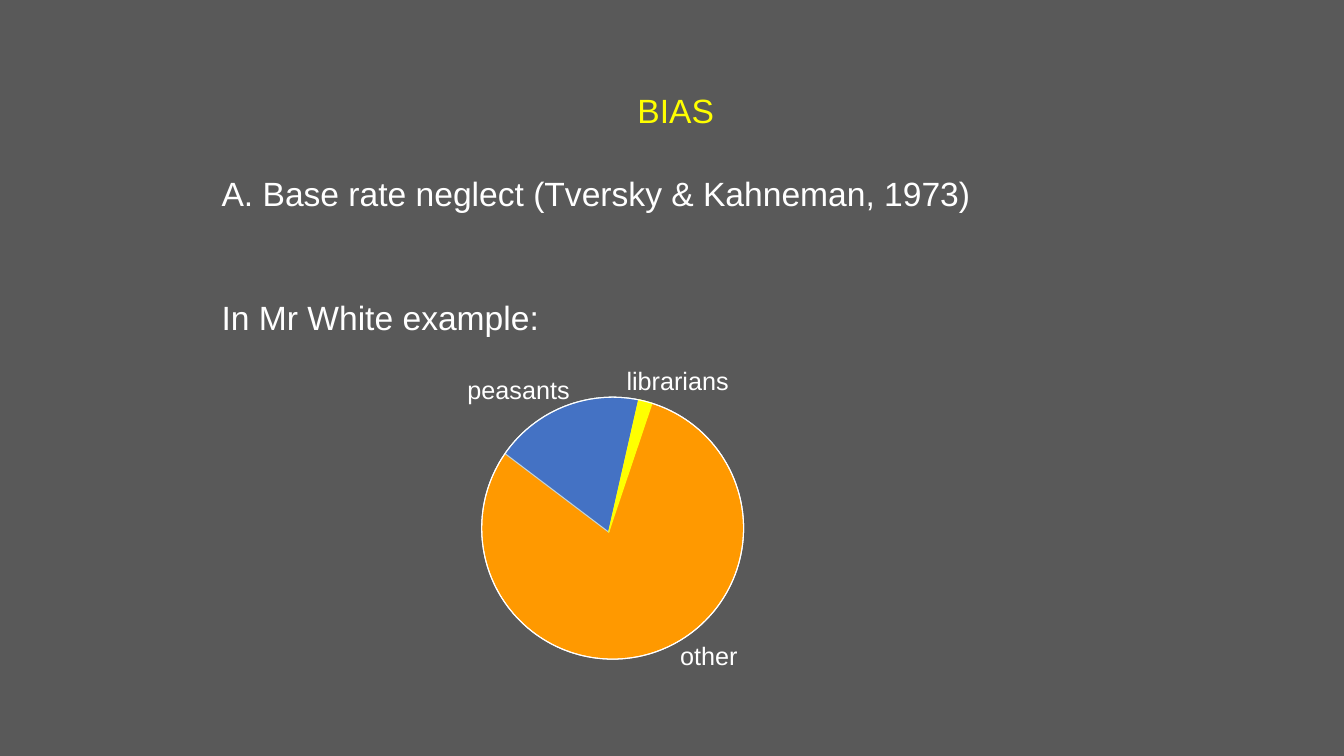
"""Build the base rate neglect slide with its hand-drawn pie."""
from math import cos, radians, sin

from lxml import etree
from pptx import Presentation
from pptx import util as u
from pptx.dml import color
from pptx.enum import shapes, text
from pptx.oxml import ns

WHITE, YELLOW = "FFFFFF", "FFFF00"
TITLE = "BIAS"
LINES = [
    ("A. Base rate neglect (Tversky & Kahneman, 1973)", 0),
    ("In Mr White example:", 59.5),
]
LABELS = [
    ("peasants", 11.53, 9.3, 3.2),
    ("librarians", 15.54, 9.09, 3.81),
    ("other", 16.89, 16.0, 3.2),
]
WEDGES = [
    (214.7, 281.5, "4472C4", "C0D3DC"),
    (281.5, 287.5, YELLOW, YELLOW),
]
HUB = (15.44, 13.31)
TIP = (15.34, 13.41)
RADIUS = 3.3
STEPS = 40


def rgb(code):
    return color.RGBColor.from_string(code)


def place(shape, *box):
    shape.left, shape.top, shape.width, shape.height = map(u.Cm, box)


def setup(frame):
    frame.word_wrap = True
    frame.auto_size = text.MSO_AUTO_SIZE.NONE
    frame.vertical_anchor = text.MSO_ANCHOR.TOP


def write(para, words, size, tint, align):
    para.alignment = align
    run = para.add_run()
    run.text = words
    run.font.name = "Arial"
    run.font.size = u.Pt(size)
    run.font.color.rgb = rgb(tint)


def paint(shape, fill, line):
    shape.shadow.inherit = False
    if fill:
        shape.fill.solid()
        shape.fill.fore_color.rgb = rgb(fill)
    else:
        shape.fill.background()
    shape.line.color.rgb = rgb(line)
    shape.line.width = u.Pt(0.75)


def disc(group, fill):
    box = [HUB[0] - RADIUS, HUB[1] - RADIUS, 2 * RADIUS, 2 * RADIUS]
    oval = group.shapes.add_shape(shapes.MSO_SHAPE.OVAL, *map(u.Cm, box))
    paint(oval, fill, WHITE)


def wedge(group, start, end, fill, line):
    turns = [radians(start + (end - start) * i / STEPS) for i in range(STEPS + 1)]
    arc = [(u.Cm(HUB[0] + RADIUS * cos(t)), u.Cm(HUB[1] + RADIUS * sin(t))) for t in turns]
    pen = group.shapes.build_freeform(*map(u.Cm, TIP))
    pen.add_line_segments(arc, close=True)
    paint(pen.convert_to_shape(), fill, line)


def main():
    deck = Presentation()
    deck.slide_width, deck.slide_height = u.Cm(33.87), u.Cm(19.05)
    slide = deck.slides.add_slide(deck.slide_layouts[1])
    slide.background.fill.solid()
    slide.background.fill.fore_color.rgb = rgb("595959")

    title, body = slide.placeholders
    place(title, 4.93, 2.13, 24.2, 1.6)
    setup(title.text_frame)
    write(title.text_frame.paragraphs[0], TITLE, 24, YELLOW, text.PP_ALIGN.CENTER)

    place(body, 5.33, 4.24, 23.01, 4.35)
    frame = body.text_frame
    setup(frame)
    for i, (words, gap) in enumerate(LINES):
        para = frame.add_paragraph() if i else frame.paragraphs[0]
        write(para, words, 24, WHITE, text.PP_ALIGN.JUSTIFY)
        para.space_before = u.Pt(gap)
        props = para._p.get_or_add_pPr()
        props.set("marL", "0")
        props.set("indent", "0")
        etree.SubElement(props, ns.qn("a:buNone"))

    pie = slide.shapes.add_group_shape()
    disc(pie, "FF9900")
    for part in WEDGES:
        wedge(pie, *part)
    disc(pie, None)

    for words, left, top, width in LABELS:
        label = slide.shapes.add_textbox(*map(u.Cm, (left, top, width, 1.02)))
        setup(label.text_frame)
        write(label.text_frame.paragraphs[0], words, 18, WHITE, text.PP_ALIGN.JUSTIFY)

    deck.save("out.pptx")


if __name__ == "__main__":
    main()
